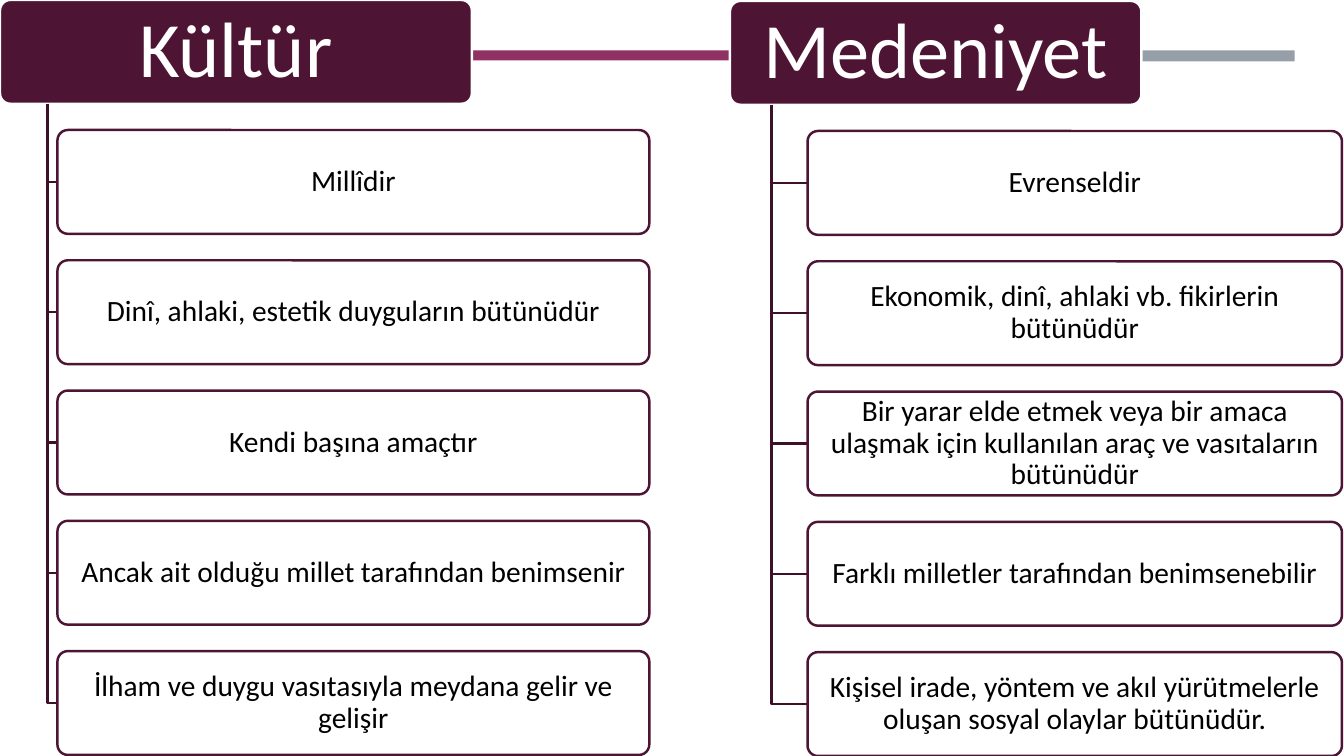
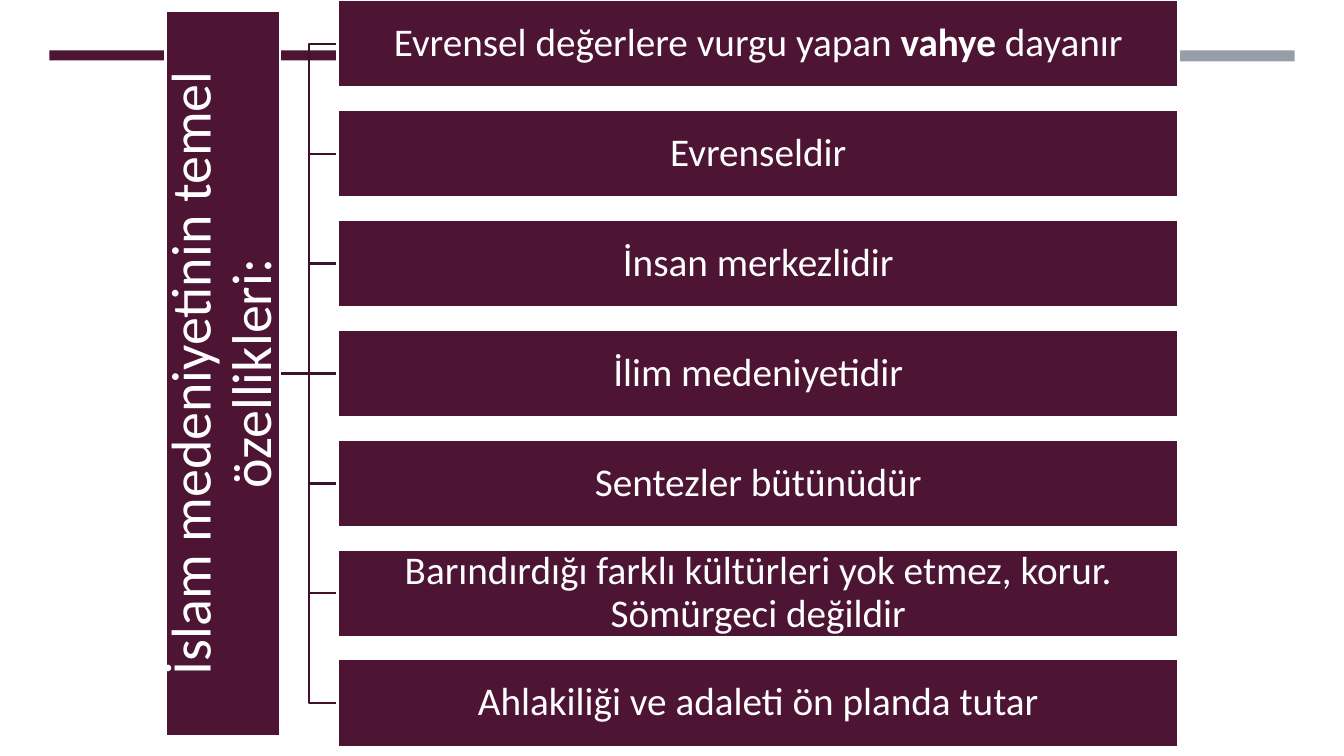
import pptx
import pptx.dml.color
import pptx.enum.shapes
import pptx.enum.text
import pptx.util
from lxml import etree
from pptx.util import Inches

PLUM, PINK, GREY = "4D1434", "903163", "969FA7"
LINE, WHITE, BLACK = "3E102A", "FFFFFF", "000000"
FONT = "Calibri"
LINE_WIDTH = 1.75
RECT = pptx.enum.shapes.MSO_SHAPE.RECTANGLE
ROUNDED = pptx.enum.shapes.MSO_SHAPE.ROUNDED_RECTANGLE

# colour: (left, height)
BANDS = {PLUM: (0.49, 0.1), PINK: (4.64, 0.1), GREY: (8.79, 0.11)}

COLUMNS = [
    {
        "title": "Kültür", "left": 0, "top": 0, "width": 4.68,
        "trunk": 0.47, "item_left": 0.57, "item_width": 5.87,
        "items": [
            "Millîdir",
            "Dinî, ahlaki, estetik duyguların bütünüdür",
            "Kendi başına amaçtır",
            "Ancak ait olduğu millet tarafından benimsenir",
            "İlham ve duygu vasıtasıyla meydana gelir ve gelişir",
        ],
    },
    {
        "title": "Medeniyet", "left": 7.24, "top": 0.01, "width": 4.08,
        "trunk": 7.65, "item_left": 8.01, "item_width": 5.3,
        "items": [
            "Evrenseldir",
            "Ekonomik, dinî, ahlaki vb. fikirlerin bütünüdür",
            "Bir yarar elde etmek veya bir amaca ulaşmak için kullanılan "
            "araç ve vasıtaların bütünüdür",
            "Farklı milletler tarafından benimsenebilir",
            "Kişisel irade, yöntem ve akıl yürütmelerle oluşan sosyal "
            "olaylar bütünüdür.",
        ],
    },
]

FEATURES_TITLE = "İslam medeniyetinin temel özellikleri:"
FEATURES = [
    ("Evrensel değerlere vurgu yapan ", "vahye", " dayanır"),
    "Evrenseldir",
    "İnsan merkezlidir",
    "İlim medeniyetidir",
    "Sentezler bütünüdür",
    "Barındırdığı farklı kültürleri yok etmez, korur. Sömürgeci değildir",
    "Ahlakiliği ve adaleti ön planda tutar",
]


def rgb(value):
    return pptx.dml.color.RGBColor.from_string(value)


def set_line(sp, color):
    sp.line.color.rgb = rgb(color)
    sp.line.width = pptx.util.Pt(LINE_WIDTH)


def add_box(slide, kind, left, top, width, height, fill, line=None):
    sp = slide.shapes.add_shape(
        kind, Inches(left), Inches(top), Inches(width), Inches(height))
    sp.shadow.inherit = False
    sp.fill.solid()
    sp.fill.fore_color.rgb = rgb(fill)
    if line:
        set_line(sp, line)
    else:
        sp.line.fill.background()
    if kind == ROUNDED:
        sp.adjustments[0] = 0.1
    return sp


def write(sp, text, size, color=WHITE, inset=(0.02, 0.02)):
    """Fill a shape with centred text; in a tuple, every second run is bold."""
    tf = sp.text_frame
    tf.word_wrap = True
    tf.vertical_anchor = pptx.enum.text.MSO_ANCHOR.MIDDLE
    tf.margin_left = tf.margin_right = Inches(inset[0])
    tf.margin_top = tf.margin_bottom = Inches(inset[1])
    p = tf.paragraphs[0]
    p.alignment = pptx.enum.text.PP_ALIGN.CENTER
    p.line_spacing = 0.9
    for i, part in enumerate((text,) if isinstance(text, str) else text):
        r = p.add_run()
        r.text = part
        r.font.name = FONT
        r.font.size = pptx.util.Pt(size)
        r.font.bold = i % 2 == 1
        r.font.color.rgb = rgb(color)


def add_elbow(slide, *points):
    """Draw an open line with right-angled bends through the points."""
    start, *rest = [(Inches(x), Inches(y)) for x, y in points]
    builder = slide.shapes.build_freeform(*start)
    builder.add_line_segments(rest, close=False)
    sp = builder.convert_to_shape()
    sp.shadow.inherit = False
    sp.fill.background()
    set_line(sp, LINE)


def add_line(slide, x1, y1, x2, y2):
    cxn = slide.shapes.add_connector(
        pptx.enum.shapes.MSO_CONNECTOR.STRAIGHT,
        Inches(x1), Inches(y1), Inches(x2), Inches(y2))
    set_line(cxn, LINE)
    etree.SubElement(cxn._element.spPr, pptx.oxml.ns.qn("a:effectLst"))
    return cxn


def add_slide(prs, *bands):
    slide = prs.slides.add_slide(prs.slide_layouts[6])
    for color in bands:
        left, height = BANDS[color]
        add_box(slide, RECT, left, 0.5, 4.05, height, color)
    return slide


def add_column(slide, column):
    height, first, last = 1.03, 1.29, 6.46
    top, trunk, left = column["top"], column["trunk"], column["item_left"]
    items = column["items"]
    step = (last - first) / (len(items) - 1)
    header = add_box(slide, ROUNDED, column["left"], top, column["width"],
                     height, PLUM, WHITE)
    write(header, column["title"], 56, inset=(0.12, 0.08))
    for i, item in enumerate(items):
        item_top = top + first + i * step
        y = item_top + height / 2
        add_elbow(slide, (trunk, top + height), (trunk, y), (left, y))
        box = add_box(slide, ROUNDED, left, item_top, column["item_width"],
                      height, WHITE, PLUM)
        write(box, item, 21, color=BLACK, inset=(0.04, 0.03))


def add_features(slide):
    left, width, height, step = 3.35, 8.34, 0.87, 1.09
    title_length, title_width, title_right = 7.19, 1.14, 2.78
    trunk = (title_right + left) / 2
    middle = len(FEATURES) // 2
    middle_y = middle * step + height / 2

    for i in reversed(range(len(FEATURES))):
        y = i * step + height / 2
        if i == middle:
            straight = add_line(slide, title_right, y, left, y)
        else:
            add_elbow(slide, (title_right, middle_y), (trunk, middle_y),
                      (trunk, y), (left, y))
    title = add_box(slide, RECT,
                    title_right - (title_width + title_length) / 2,
                    middle_y - title_width / 2,
                    title_length, title_width, PLUM, WHITE)
    title.rotation = 270
    write(title, FEATURES_TITLE, 40, inset=(0.03, 0.03))
    for i, feature in enumerate(FEATURES):
        bar = add_box(slide, RECT, left, i * step, width, height, PLUM, WHITE)
        write(bar, feature, 28)
        if i == middle:
            straight.end_connect(bar, 1)


def main():
    prs = pptx.Presentation()
    prs.slide_width, prs.slide_height = Inches(13.33), Inches(7.5)
    comparison = add_slide(prs, GREY, PINK)
    for column in COLUMNS:
        add_column(comparison, column)
    add_features(add_slide(prs, PLUM, GREY))
    prs.save("out.pptx")


if __name__ == "__main__":
    main()
